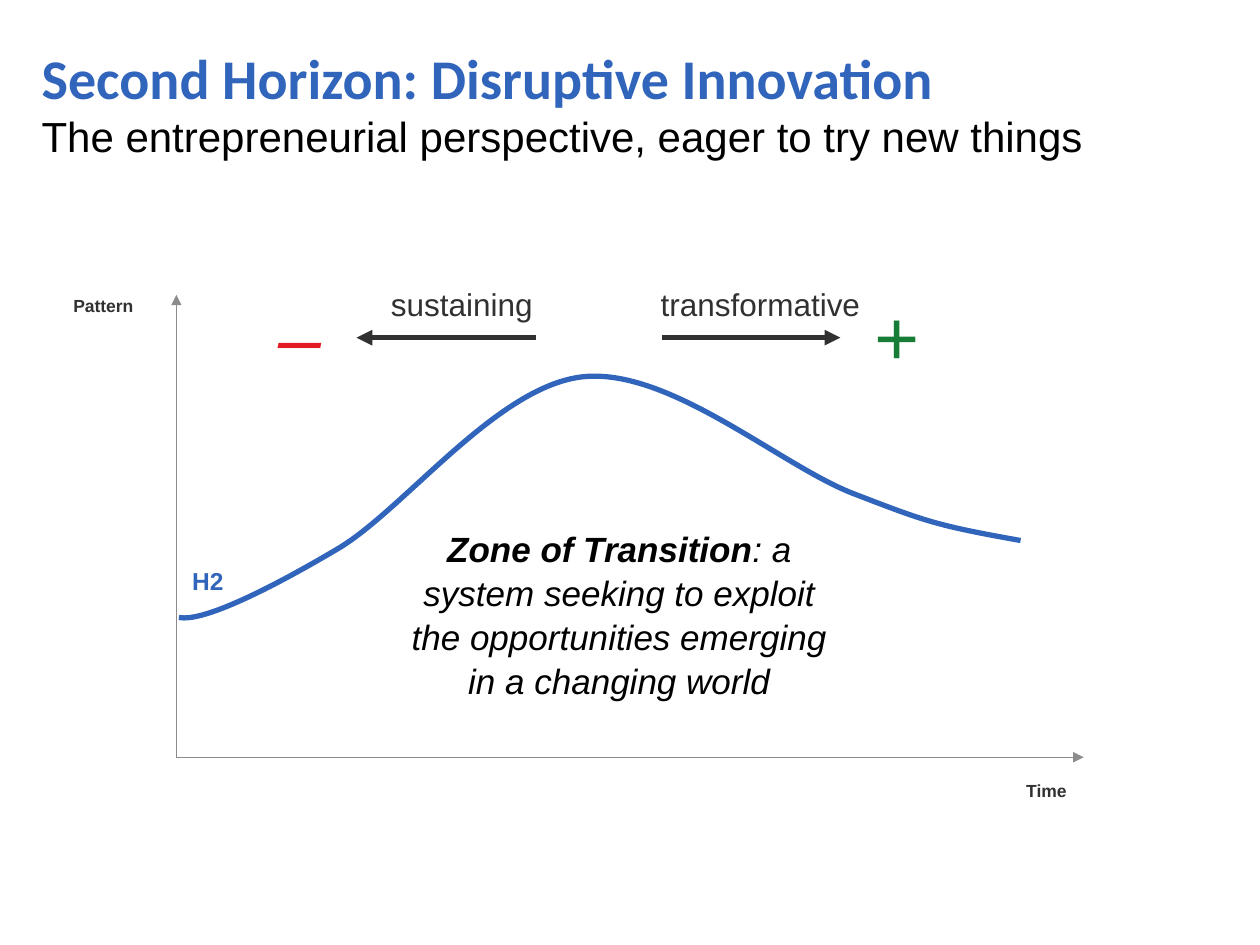
from lxml import etree
from pptx import Presentation
from pptx import util as u
from pptx.dml.color import RGBColor
from pptx.enum import shapes, text
from pptx.oxml.ns import qn

BLUE, DARK, GREY, BLACK = "3165BB", "313131", "8C8C8C", "000000"
GREEN, RED = "177D36", "E31C24"

presentation = Presentation()
presentation.slide_width, presentation.slide_height = u.Inches(10), u.Inches(7.5)
slide = presentation.slides.add_slide(presentation.slide_layouts[1])
# Square grid: 100 columns by 75 rows
cell = presentation.slide_width // 100


def write(shape, box, runs, size, color, font="Arial", align="CENTER", wrap=True):
    """Place a text shape at box and fill it with (text, bold, italic) runs."""
    shape.left, shape.top, shape.width, shape.height = [int(v * cell) for v in box]
    frame = shape.text_frame
    frame.margin_left = frame.margin_top = frame.margin_right = frame.margin_bottom = 0
    frame.auto_size = text.MSO_AUTO_SIZE.NONE
    frame.vertical_anchor = text.MSO_ANCHOR.TOP
    frame.word_wrap = wrap
    paragraph = frame.paragraphs[0]
    paragraph.alignment = text.PP_ALIGN[align]
    paragraph.line_spacing = 1.05
    paragraph.space_before = u.Pt(0)
    for words, bold, italic in runs:
        run = paragraph.add_run()
        run.text = words
        run.font.name, run.font.size = font, u.Pt(size)
        run.font.bold, run.font.italic = bold, italic
        run.font.color.rgb = RGBColor.from_string(color)


def arrow(parent, start, end, color, width):
    """Draw a straight line with a triangle at its end."""
    line = parent.add_connector(shapes.MSO_CONNECTOR.STRAIGHT,
                                *[int(v * cell) for v in (*start, *end)])
    line.line.color.rgb = RGBColor.from_string(color)
    line.line.width = u.Pt(width)
    etree.SubElement(line.line._get_or_add_ln(), qn("a:tailEnd"), type="triangle")
    etree.SubElement(line._element.spPr, qn("a:effectLst"))


# Title and subtitle
body = slide.placeholders[1]
properties = body.text_frame.paragraphs[0]._p.get_or_add_pPr()
properties.set("marL", "0")
properties.set("indent", "0")
etree.SubElement(properties, qn("a:buNone"))
write(body, (3.3, 8.6, 88.7, 8.3),
      [("The entrepreneurial perspective, eager to try new things", False, False)],
      24, BLACK, align="LEFT")
write(slide.shapes.title, (3.3, 3.2, 88.7, 5.1),
      [("Second Horizon: Disruptive Innovation", True, False)],
      32, BLUE, font="Calibri", align="LEFT")

# Axes share one origin
origin = (14, 60.1)
axes = slide.shapes.add_group_shape()
for tip in ((14, 23.4), (86, 60.1)):
    arrow(axes.shapes, origin, tip, GREY, 0.75)

# H2 curve: a start point, then control, control, anchor for each segment
curve_points = [
    (14.2, 49),
    (16.1, 49.4), (21.5, 46.7), (26.9, 43.5),
    (32.2, 40.3), (39.5, 30.6), (46.3, 29.9),
    (53.2, 29.2), (62, 37), (67.8, 39.2),
    (73.5, 41.4), (74.3, 41.7), (81, 42.9),
]
builder = slide.shapes.build_freeform(*curve_points[0], scale=cell / 100)
builder = slide.shapes.build_freeform(*[v * 100 for v in curve_points[0]], scale=cell / 100)
builder.add_line_segments([(x * 100, y * 100) for x, y in curve_points[1:]], close=False)
curve = builder.convert_to_shape()
curve.shadow.inherit = False
curve.fill.background()
curve.line.color.rgb = RGBColor.from_string(BLUE)
curve.line.width = u.Pt(3)
# Turn every three straight segments into one Bézier segment
segments = list(curve._element.iter(qn("a:lnTo")))
for first in range(0, len(segments), 3):
    bezier = etree.Element(qn("a:cubicBezTo"))
    segments[first].addprevious(bezier)
    for segment in segments[first:first + 3]:
        bezier.append(segment[0])
        segment.getparent().remove(segment)

# Direction arrows, mirrored about the middle of the gap
middle, arrow_row = 47.5, 26.8
for side in (1, -1):
    arrow(slide.shapes, (middle + side * 5, arrow_row),
          (middle + side * 19.2, arrow_row), DARK, 3)

# Labels: box, runs, size, colour, wrap
labels = [
    ((5.8, 23.3, 4.8, 1.7), [("Pattern", True, False)], 10, DARK, False),
    ((81.4, 61.8, 3.3, 1.7), [("Time", True, False)], 10, DARK, False),
    ((14.7, 44.8, 3.6, 2.4), [("H2", True, False)], 14, BLUE, True),
    ((68.3, 22.5, 5.6, 7.4), [("+", False, True)], 44, GREEN, True),
    ((21, 22.5, 5.6, 7.4), [("–", False, True)], 44, RED, True),
    ((23.3, 22.5, 26.7, 3), [("sustaining", False, False)], 18, DARK, True),
    ((47, 22.5, 26.7, 3), [("transformative", False, False)], 18, DARK, True),
    ((32.5, 41.7, 33.3, 13.5),
     [("Zone of Transition", True, True),
      (": a system seeking to exploit the opportunities emerging in a changing world",
       False, True)], 20, BLACK, True),
]
for box, runs, size, color, wrap in labels:
    write(slide.shapes.add_textbox(0, 0, cell, cell), box, runs, size, color, wrap=wrap)

presentation.save("out.pptx")
